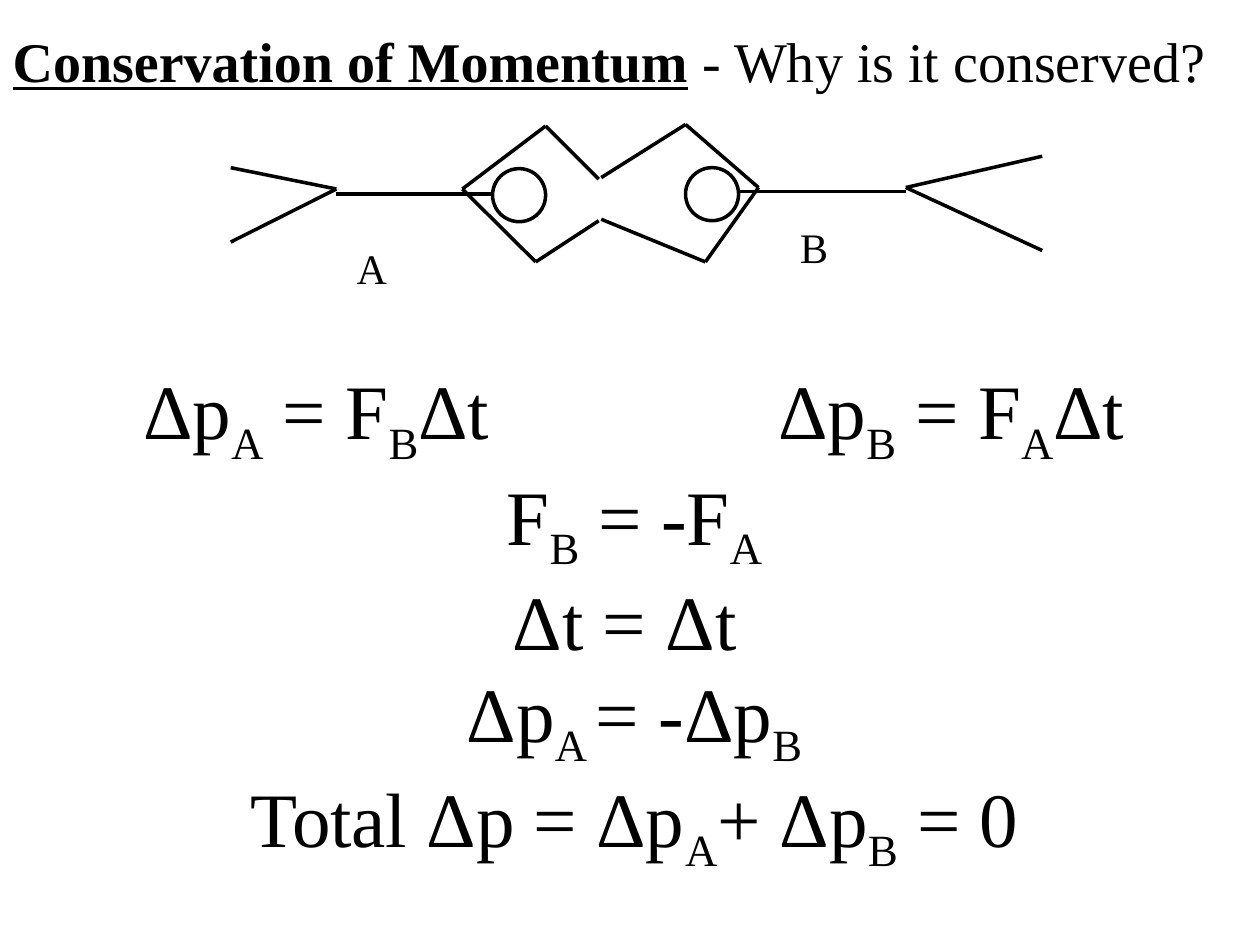
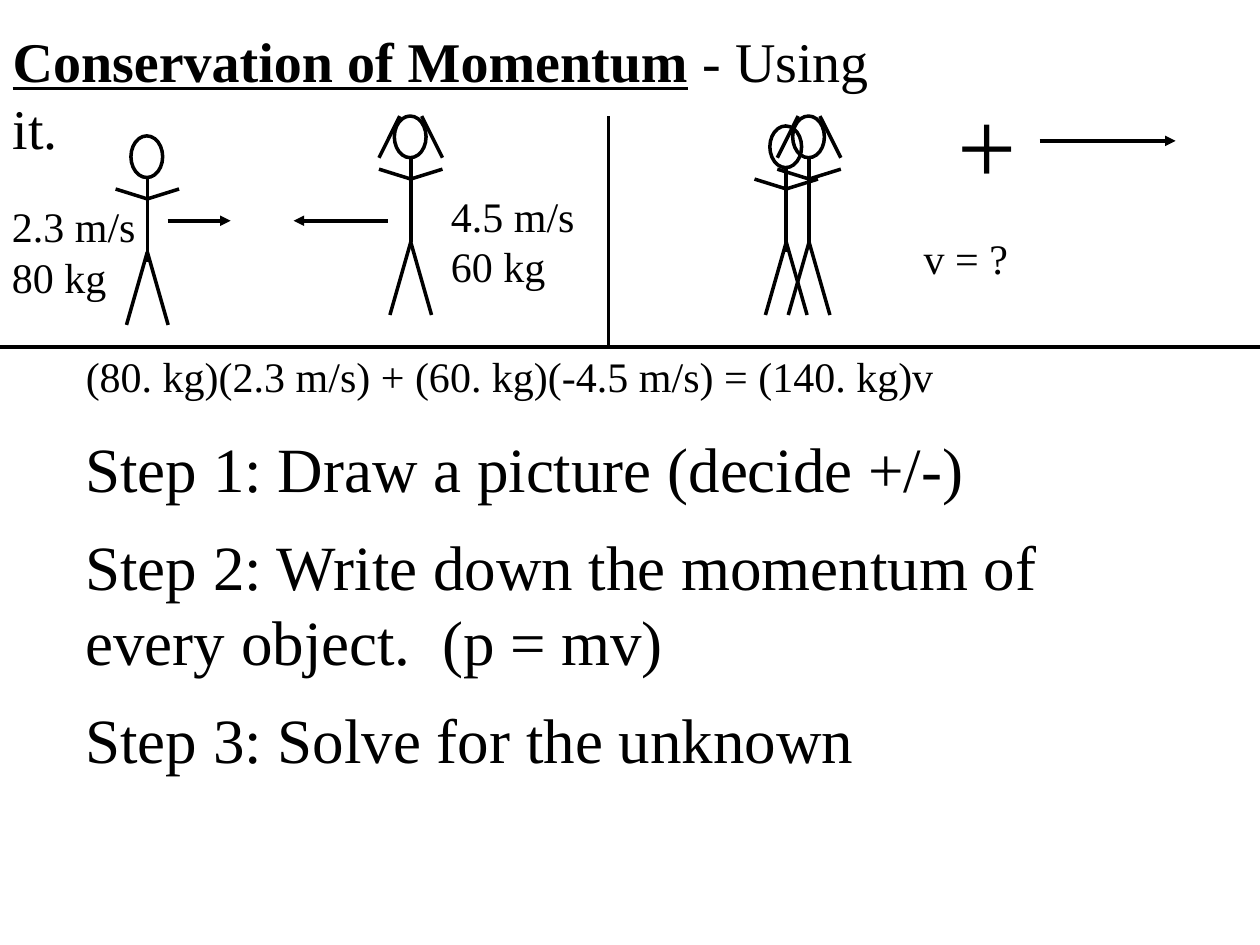
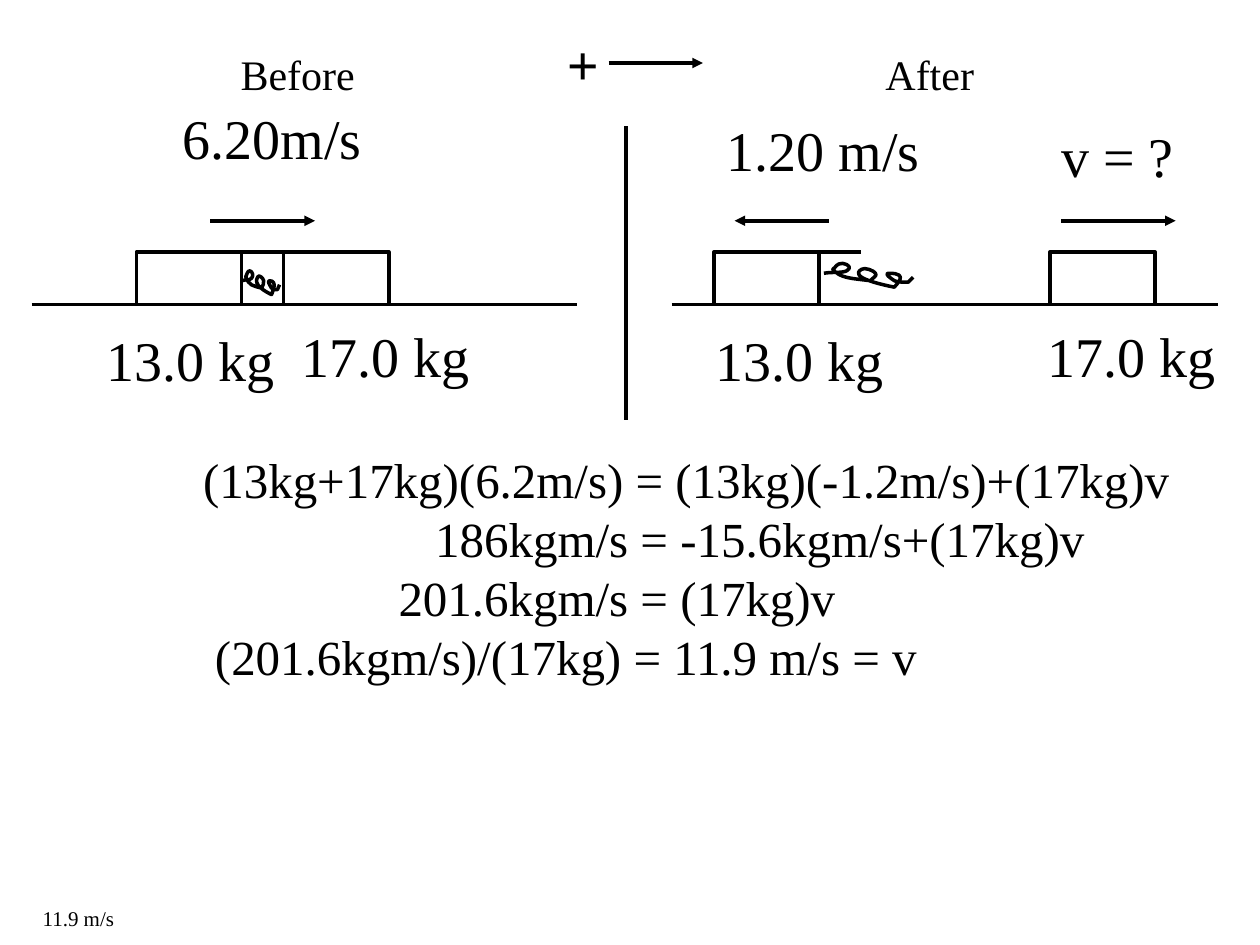
from itertools import chain, pairwise

from lxml.etree import SubElement
from pptx import Presentation
from pptx.dml.color import RGBColor
from pptx.enum.shapes import MSO_CONNECTOR, MSO_SHAPE
from pptx.enum.text import MSO_ANCHOR, MSO_AUTO_SIZE, PP_ALIGN
from pptx.oxml.ns import qn
from pptx.util import Cm, Pt

COLORS = {"ink": "000000"}
FONT = "Times New Roman"
TITLE = "Conservation of Momentum"
STROKE = Pt(2)

# Lengths are centimetres. Labels are (text, left, top, width, size).
# An underscore makes the next character a subscript.
DERIVATION = ["F_B = -F_A", "Δt = Δt ", "Δp_A_ = -Δp_B", "Total Δp = Δp_A+ Δp_B = 0"]

SWIMMER_HEADS = [(9.93, 3.4), (13.82, 3.38)]
SWIMMER_LIMBS = [
    [(4.65, 3.38), (6.78, 3.81), (4.65, 4.88)],
    [(6.78, 3.91), (9.96, 3.91)],
    [(12.07, 3.61), (11, 2.54), (9.32, 3.81), (10.8, 5.28), (12.07, 4.45)],
    [(21.01, 3.15), (18.26, 3.78), (21.01, 5.05)],
    [(14.86, 3.86), (18.26, 3.86)],
    [(12.12, 3.58), (13.82, 2.51), (15.29, 3.78), (14.22, 5.28), (12.12, 4.42)],
]
SWIMMER_LABELS = [
    ("A", 6.94, 4.76, 1.12, 24), ("B", 15.88, 4.34, 1.07, 24),
    ("Δp_A = F_BΔt", 2.64, 7.19, 7.5, 44), ("Δp_B = F_AΔt", 15.44, 7.19, 7.5, 44),
]

STEPS = [
    "Step 1: Draw a picture (decide +/-)",
    "Step 2: Write down the momentum of every object.  (p = mv)",
    "Step 3: Solve for the unknown",
]
PEOPLE = [  # hip x, hip y, long hair
    (15.85, 4.88, False), (16.31, 4.88, True),
    (2.97, 5.08, False), (8.28, 4.88, True),
]
PEOPLE_LABELS = [
    ("+", 19.05, 1.47, 1.7, 60),
    ("4.5 m/s\n60 kg", 8.84, 3.71, 3, 24),
    ("2.3 m/s\n80 kg", -0.01, 3.92, 3, 24),
    ("v = ?", 18.37, 4.57, 2.21, 24),
    ("(80. kg)(2.3 m/s) + (60. kg)(-4.5 m/s) = (140. kg)v", 1.48, 6.95, 22.48, 24),
]
PEOPLE_RULES = [[(0, 6.99), (25.4, 6.99)], [(12.27, 6.99), (12.27, 2.34)]]
PEOPLE_ARROWS = [
    [(20.96, 2.84), (23.7, 2.84)],
    [(3.38, 4.45), (4.65, 4.45)],
    [(7.82, 4.45), (5.92, 4.45)],
]

SOLUTION = [  # indent, equation
    (3.2, "(13kg+17kg)(6.2m/s) = (13kg)(-1.2m/s)+(17kg)v"),
    (7.88, "186kgm/s = -15.6kgm/s+(17kg)v"),
    (7.14, "201.6kgm/s = (17kg)v"),
    (3.44, "(201.6kgm/s)/(17kg) = 11.9 m/s = v"),
]
CART_LABELS = [
    ("Before", 4.6, 0.85, 2.82, 24), ("After", 17.6, 0.85, 2.29, 24),
    ("6.20m/s", 3.43, 1.96, 4.11, 32), ("1.20 m/s", 14.4, 2.21, 4.39, 32),
    ("v = ?", 21.14, 2.33, 2.77, 32),
    ("13.0 kg", 1.9, 6.43, 3.89, 32), ("17.0 kg", 5.83, 6.35, 3.89, 32),
    ("13.0 kg", 14.17, 6.43, 3.89, 32), ("17.0 kg", 20.87, 6.35, 3.89, 32),
    ("11.9 m/s", 0.61, 18.12, 1.98, 12),
]
CART_LEFTS = (2.75, 5.72, 14.39, 21.17)
CART_TOP, CART_WIDTH, CART_HEIGHT = 5.08, 2.12, 1.06
GROUND = CART_TOP + CART_HEIGHT
CART_RULES = [
    [(12.62, 2.54), (12.62, 8.46)],
    [(0.64, GROUND), (11.63, GROUND)],
    [(13.54, GROUND), (24.56, GROUND)],
    [(4.88, CART_TOP), (5.72, CART_TOP)],
    [(16.51, CART_TOP), (17.35, CART_TOP)],
]
CART_ARROWS = [
    [(12.27, 1.27), (14.17, 1.27)],
    [(4.24, 4.45), (6.35, 4.45)],
    [(16.71, 4.45), (14.81, 4.45)],
    [(21.39, 4.45), (23.7, 4.45)],
]
SPRINGS = [(4.88, 5.66, 0.42), (16.61, 5.51, 1)]  # left, top, stretch
SPRING_CURVES = [  # two control points and an end point each
    [(0.15, -0.03), (0.36, 0), (0.46, -0.05)],
    [(0.56, -0.1), (0.51, -0.18), (0.38, -0.2)],
    [(0.25, -0.2), (0.25, -0.13), (0.18, -0.08)],
    [(0.33, 0.1), (0.53, 0.1), (0.94, 0.15)],
    [(0.97, 0.1), (1.09, 0.05), (1.04, 0)],
    [(1.02, -0.05), (0.81, -0.13), (0.76, -0.08)],
    [(0.48, 0.08), (1.17, 0.23), (1.42, 0.28)],
    [(1.45, 0.23), (1.73, 0), (1.32, 0)],
    [(1.19, 0), (1.35, 0.1), (1.42, 0.15)],
    [(1.47, 0.18), (1.6, 0.18), (1.7, 0.18)],
    [(1.73, 0.15), (1.8, 0.08), (1.8, 0.08)],
]


def ink():
    return RGBColor.from_string(COLORS["ink"])


def style(para, size, bold=None):
    font = para.font
    font.name, font.size, font.bold = FONT, Pt(size), bold
    font.color.rgb = ink()


def write_formula(para, text):
    first, *rest = text.split("_")
    para.add_run().text = first
    for piece in rest:
        letter = para.add_run()
        letter.text = piece[0]
        letter.font._element.set("baseline", "-25000")
        if piece[1:]:
            para.add_run().text = piece[1:]


def place(shape, left, top, width, height):
    shape.left, shape.top = Cm(left), Cm(top)
    shape.width, shape.height = Cm(width), Cm(height)
    frame = shape.text_frame
    frame.word_wrap = True
    frame.auto_size = MSO_AUTO_SIZE.NONE
    frame.vertical_anchor = MSO_ANCHOR.TOP
    return frame


def add_title(page, ending, width):
    para = place(page.shapes.title, 0, 0.41, width, 1.6).paragraphs[0]
    para.alignment = PP_ALIGN.LEFT
    style(para, 32)
    topic, question = para.add_run(), para.add_run()
    topic.text, question.text = TITLE, ending
    topic.font.bold = topic.font.underline = True


def fill_body(page, items, box, size, alignment=PP_ALIGN.LEFT, gap=0):
    """Write (indent, text) items without bullets."""
    frame = place(page.placeholders[1], *box)
    for index, (indent, text) in enumerate(items):
        para = frame.add_paragraph() if index else frame.paragraphs[0]
        props = para._p.get_or_add_pPr()
        props.set("marL", str(Cm(indent)))
        props.set("indent", "0")
        SubElement(props, qn("a:buNone"))
        para.alignment = alignment
        para.space_before = Pt(gap if index else 0)
        style(para, size)
        write_formula(para, text)


def add_label(page, text, left, top, width, size, bold=None):
    lines = text.split("\n")
    height = 0.25 + 0.042 * size * len(lines)
    slack = 0.3
    box = page.shapes.add_textbox(0, 0, 0, 0)
    frame = place(box, left, top, width + slack, height)
    for index, line in enumerate(lines):
        para = frame.add_paragraph() if index else frame.paragraphs[0]
        style(para, size, bold)
        write_formula(para, line)


def add_path(page, points, arrow=False):
    """Join consecutive points with straight connectors."""
    for start, end in pairwise(points):
        line = page.shapes.add_connector(
            MSO_CONNECTOR.STRAIGHT, *(Cm(value) for value in (*start, *end)))
        line.line.color.rgb = ink()
        line.line.width = STROKE
        if arrow:
            SubElement(line.line._get_or_add_ln(), qn("a:tailEnd"), type="triangle")
        SubElement(line._element.spPr, qn("a:effectLst"))


def outline(shape):
    shape.shadow.inherit = False
    shape.fill.background()
    shape.line.color.rgb = ink()
    shape.line.width = STROKE


def add_outline(page, kind, *box):
    outline(page.shapes.add_shape(kind, *(Cm(value) for value in box)))


def add_person(page, x, hip, long_hair):
    chest = hip - (0.2 if long_hair else 0)
    add_path(page, [(x - 0.42, hip + 1.47), (x, hip), (x + 0.42, hip + 1.47)])
    add_path(page, [(x, chest + 0.2), (x, chest - 1.5)])
    add_outline(page, MSO_SHAPE.OVAL, x - 0.33, chest - 2.34, 0.64, 0.84)
    add_path(page, [(x - 0.64, chest - 1.27), (x, chest - 1.07), (x + 0.64, chest - 1.27)])
    if long_hair:
        for side in (-1, 1):
            add_path(page, [(x + side * 0.22, chest - 2.34), (x + side * 0.64, chest - 1.5)])


def add_spring(page, left, top, stretch):
    points = [(Cm(left + stretch * x), Cm(top + y))
              for x, y in chain.from_iterable(SPRING_CURVES)]
    builder = page.shapes.build_freeform(Cm(left), Cm(top))
    builder.add_line_segments(points, close=False)
    spring = builder.convert_to_shape()
    outline(spring)
    # Each three straight segments become one cubic curve.
    segments = list(spring._element.iter(qn("a:lnTo")))
    track = segments[0].getparent()
    for first in range(0, len(segments), 3):
        curve = SubElement(track, qn("a:cubicBezTo"))
        for segment in segments[first:first + 3]:
            curve.append(segment[0])
            track.remove(segment)


def add_drawing(page, labels, rules, arrows=()):
    for rule in rules:
        add_path(page, rule)
    for arrow in arrows:
        add_path(page, arrow, arrow=True)
    for label in labels:
        add_label(page, *label)


def build_why(page):
    add_title(page, " - Why is it conserved?", 25)
    items = [(0, text) for text in DERIVATION]
    fill_body(page, items, (1.45, 9.31, 22.68, 7.43), 44, PP_ALIGN.CENTER)
    add_drawing(page, SWIMMER_LABELS, SWIMMER_LIMBS)
    for left, top in SWIMMER_HEADS:
        add_outline(page, MSO_SHAPE.OVAL, left, top, 1.07, 1.07)


def build_using(page):
    add_title(page, " - Using it.", 18.5)
    items = [(0, text) for text in STEPS]
    fill_body(page, items, (1.47, 8.54, 22.48, 7.3), 36, gap=12.4)
    for person in PEOPLE:
        add_person(page, *person)
    add_drawing(page, PEOPLE_LABELS, PEOPLE_RULES, PEOPLE_ARROWS)


def build_carts(page):
    title = page.shapes.title.element
    title.getparent().remove(title)
    fill_body(page, SOLUTION, (0.64, 8.94, 24.13, 5), 28)
    add_drawing(page, CART_LABELS, CART_RULES, CART_ARROWS)
    add_label(page, "+", 11.18, 0.48, 1.14, 32, bold=True)
    for left in CART_LEFTS:
        add_outline(page, MSO_SHAPE.RECTANGLE, left, CART_TOP, CART_WIDTH, CART_HEIGHT)
    for spring in SPRINGS:
        add_spring(page, *spring)


def main():
    deck = Presentation()
    deck.slide_width, deck.slide_height = Cm(25.4), Cm(19.05)
    for build in (build_why, build_using, build_carts):
        build(deck.slides.add_slide(deck.slide_layouts[1]))
    deck.save("out.pptx")


if __name__ == "__main__":
    main()
